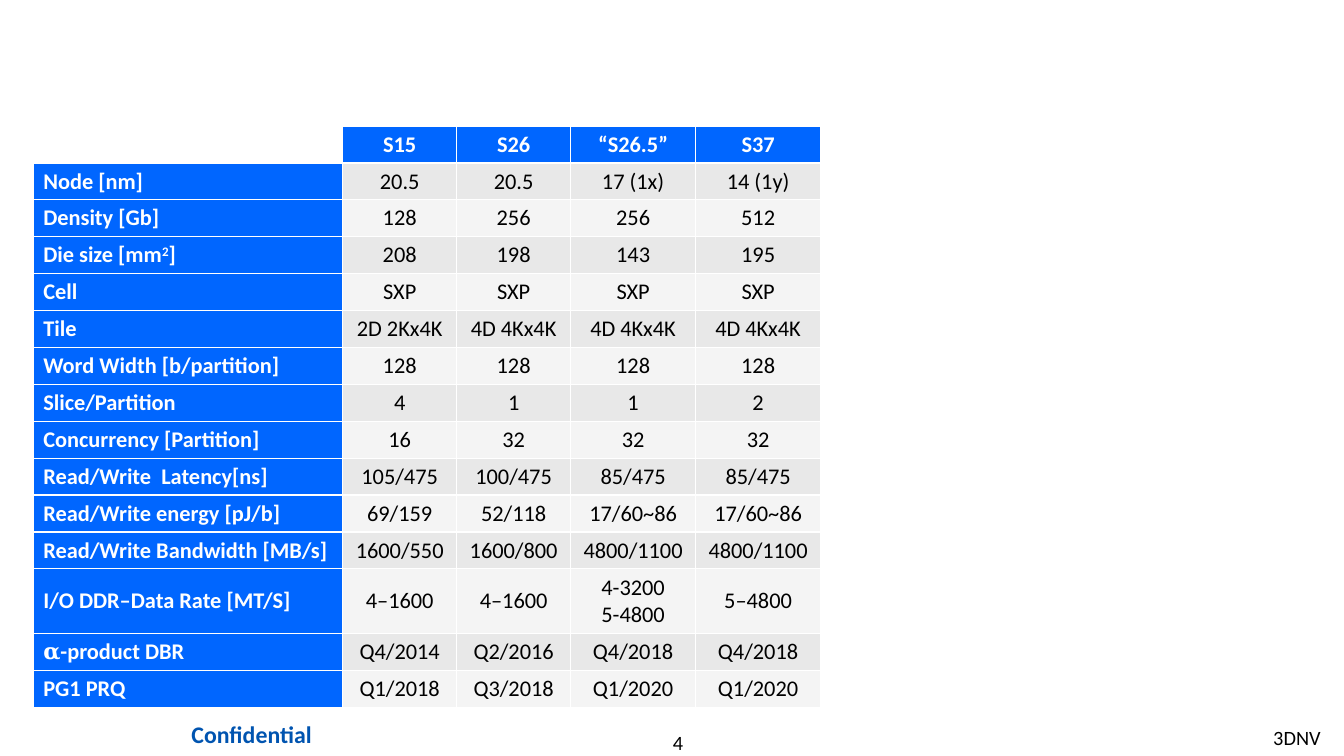
"""Build the slide comparing four memory generations in a table."""
from pptx import Presentation
from pptx.dml.color import RGBColor
from pptx.enum import text
from pptx.util import Inches, Pt

BLUE, WHITE, BLACK = "0066FF", "FFFFFF", "000000"
BANDS = ["F4F4F4", "E8E8E8"]


def color(value):
    return RGBColor.from_string(value)


def style(paragraph, size, ink, bold, align):
    paragraph.alignment = align
    font = paragraph.font
    font.name, font.size, font.bold = "Calibri", Pt(size), bold
    font.color.rgb = color(ink)


LEFT, CENTER = text.PP_ALIGN.LEFT, text.PP_ALIGN.CENTER
GENERATIONS = [
    ["", "S15", "S26", "“S26.5”", "S37"],
    ["Node [nm]", "20.5", "20.5", "17 (1x)", "14 (1y)"],
    ["Density [Gb]", "128", "256", "256", "512"],
    ["Die size [mm", "208", "198", "143", "195"],
    ["Cell", "SXP", "SXP", "SXP", "SXP"],
    ["Tile", "2D 2Kx4K", "4D 4Kx4K", "4D 4Kx4K", "4D 4Kx4K"],
    ["Word Width [b/partition]", "128", "128", "128", "128"],
    ["Slice/Partition", "4", "1", "1", "2"],
    ["Concurrency [Partition]", "16", "32", "32", "32"],
    ["Read/Write  Latency[ns]", "105/475", "100/475", "85/475", "85/475"],
    ["Read/Write energy [pJ/b]", "69/159", "52/118", "17/60~86", "17/60~86"],
    ["Read/Write Bandwidth [MB/s]", "1600/550", "1600/800", "4800/1100", "4800/1100"],
    ["I/O DDR–Data Rate [MT/S]", "4–1600", "4–1600", "4-3200\n5-4800", "5–4800"],
    ["𝛂", "Q4/2014", "Q2/2016", "Q4/2018", "Q4/2018"],
    ["PG1 PRQ", "Q1/2018", "Q3/2018", "Q1/2020", "Q1/2020"],
]
DIE_SIZE, DATA_RATE, PRODUCT = 3, 12, 13
TABLE_HEIGHT, DATA_RATE_HEIGHT = 5.77, 0.64
row_height = (TABLE_HEIGHT - DATA_RATE_HEIGHT) / (len(GENERATIONS) - 1)

prs = Presentation()
prs.slide_width, prs.slide_height = Inches(13.33), Inches(7.5)
slide = prs.slides.add_slide(prs.slide_layouts[6])

footers = [
    ("4", 5.56, 7.24, 2.33, 0.24, 0, 0, 14.5, BLACK, False, CENTER),
    ("3DNV", 12.53, 7.15, 0.7, 0.35, 0.1, 0.05, 14.5, BLACK, False, LEFT),
    ("Confidential", 1.55, 7.08, 1.89, 0.41, 0.12, 0.06, 17, "0054B0", True, CENTER),
]
for words, left, top, width, height, side, edge, size, ink, bold, align in footers:
    footer = slide.shapes.add_textbox(
        Inches(left), Inches(top), Inches(width), Inches(height)).text_frame
    footer.word_wrap = words != "3DNV"
    footer.margin_left = footer.margin_right = Inches(side)
    footer.margin_top = footer.margin_bottom = Inches(edge)
    footer.text = words
    style(footer.paragraphs[0], size, ink, bold, align)

comparison = slide.shapes.add_table(
    len(GENERATIONS), 5, Inches(0.33), Inches(1.25),
    Inches(7.81), Inches(TABLE_HEIGHT)).table
comparison.first_col = True
for column, width in zip(comparison.columns, [3.07, 1.13, 1.13, 1.24, 1.24]):
    column.width = Inches(width)

for r, values in enumerate(GENERATIONS):
    comparison.rows[r].height = Inches(DATA_RATE_HEIGHT if r == DATA_RATE else row_height)
    for c, value in enumerate(values):
        cell = comparison.cell(r, c)
        heading = r == 0 or c == 0
        cell.vertical_anchor = text.MSO_ANCHOR.MIDDLE
        cell.margin_top = cell.margin_bottom = Inches(0.04 if value else 0)
        if value:
            cell.fill.solid()
            cell.fill.fore_color.rgb = color(BLUE if heading else BANDS[r % 2])
        else:
            cell.fill.background()
        cell.text = value
        for paragraph in cell.text_frame.paragraphs:
            style(paragraph, 16, WHITE if heading else BLACK, heading,
                  CENTER if c else LEFT)

die_size = comparison.cell(DIE_SIZE, 0).text_frame.paragraphs[0]
square = die_size.add_run()
square.text = "2"
square._r.get_or_add_rPr().set("baseline", "30000")
die_size.add_run().text = "]"

product = comparison.cell(PRODUCT, 0).text_frame.paragraphs[0]
product.runs[0].font.name = "Cambria"
product.add_run().text = "-product DBR"

prs.save("out.pptx")
